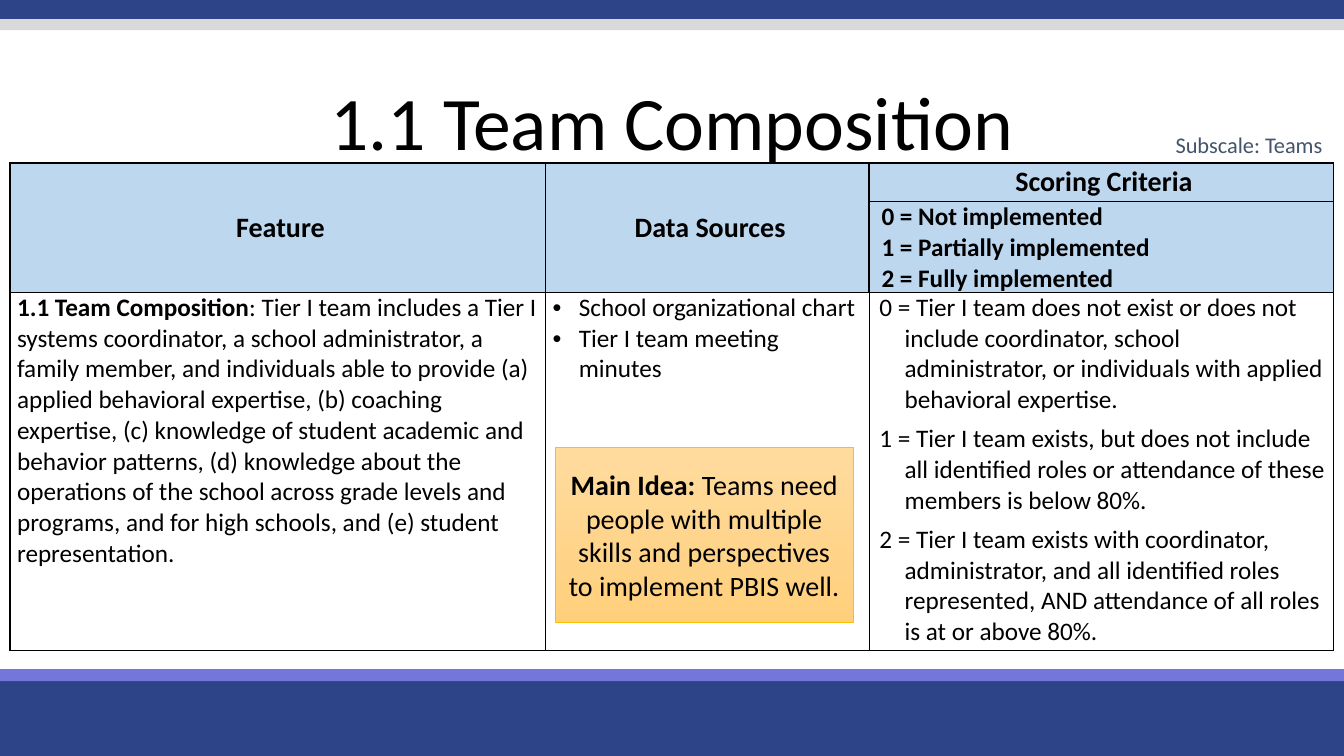
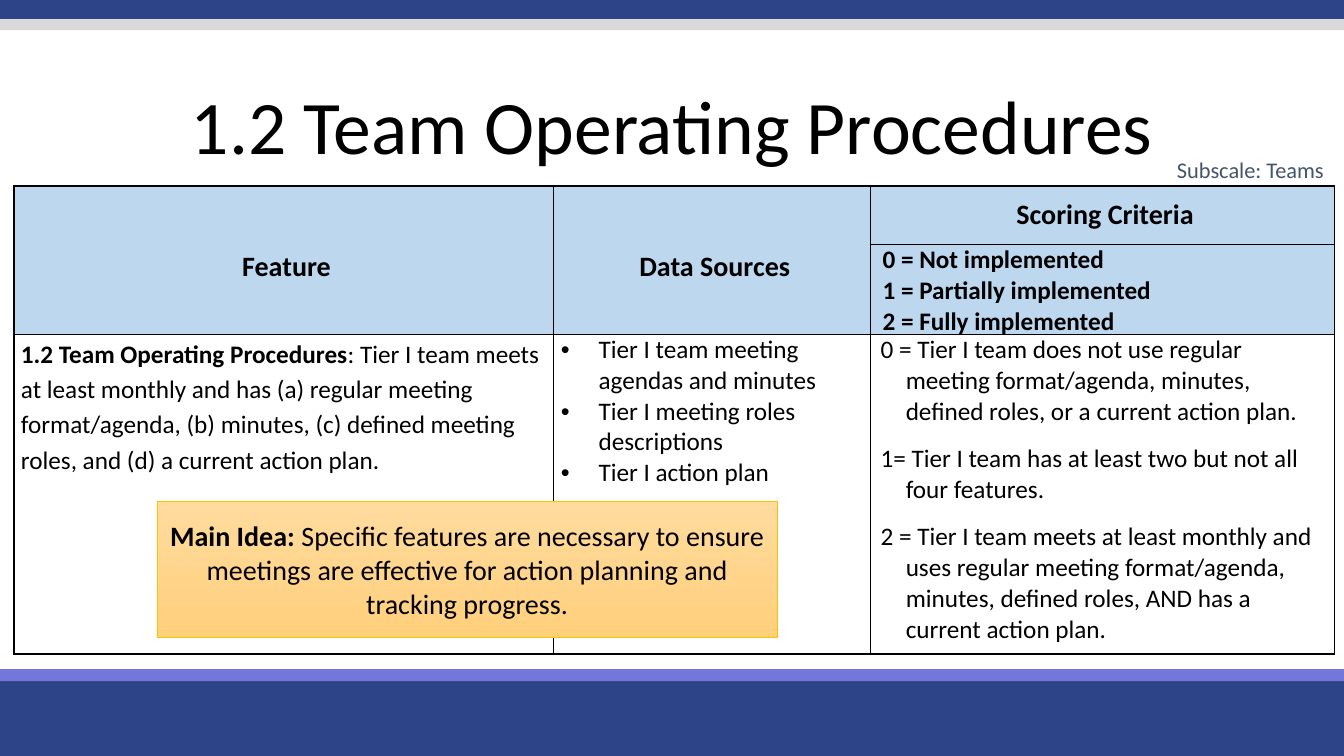
"""Builds two scoring slides on team features, each with a header table, a criteria table and a main idea."""
from dataclasses import dataclass

from lxml import etree
from pptx import Presentation
from pptx.dml.color import RGBColor
from pptx.enum.shapes import MSO_SHAPE
from pptx.enum.text import MSO_ANCHOR, PP_ALIGN
from pptx.oxml.ns import qn
from pptx.util import Pt

RECTANGLE = MSO_SHAPE.RECTANGLE
LEFT, CENTER, RIGHT = PP_ALIGN.LEFT, PP_ALIGN.CENTER, PP_ALIGN.RIGHT
TOP, MIDDLE = MSO_ANCHOR.TOP, MSO_ANCHOR.MIDDLE


@dataclass(frozen=True)
class Theme:
    font: str = "Calibri"
    navy: str = "2E4488"
    violet: str = "7476DA"
    grey: str = "D9D9D9"
    black: str = "000000"
    white: str = "FFFFFF"
    header: str = "BDD7EE"
    slate: str = "44546A"
    idea_light: str = "FFDB9E"
    idea_dark: str = "FFD07C"
    idea_line: str = "FFC000"
    title_size: int = 54
    large_size: int = 20
    body_size: int = 18
    label_size: int = 16
    thin: float = 1
    thick: float = 1.5


THEME = Theme()
WIDTH, HEIGHT = 960, 540
BANDS = [
    (482.4, HEIGHT - 482.4, THEME.navy),
    (478, 8.6, THEME.violet),
    (0, 13.7, THEME.navy),
    (13.7, 7.9, THEME.grey),
]
HEADINGS = ["Feature", "Data Sources", "Scoring Criteria"]
SCALE = ["0 = Not implemented", "1 = Partially implemented", "2 = Fully implemented"]
SUBSCALE = "Subscale: Teams"

SLIDES = [
    {
        "title": "1.1 Team Composition",
        "title_place": (0, 57, WIDTH, 52.6),
        "feature": ": Tier I team includes a Tier I systems coordinator, a school administrator, "
                   "a family member, and individuals able to provide (a) applied behavioral expertise, "
                   "(b) coaching expertise, (c) knowledge of student academic and behavior patterns, "
                   "(d) knowledge about the operations of the school across grade levels and programs, "
                   "and for high schools, and (e) student representation.",
        "feature_spacing": 1,
        "sources": ["School organizational chart", "Tier I team meeting minutes"],
        "source_indent": 18.7,
        "criteria": [
            "0 = Tier I team does not exist or does not include coordinator, school administrator, "
            "or individuals with applied behavioral expertise.",
            "1 = Tier I team exists, but does not include all identified roles or attendance of "
            "these members is below 80%.",
            "2 = Tier I team exists with coordinator, administrator, and all identified roles "
            "represented, AND attendance of all roles is at or above 80%.",
        ],
        "criteria_gap": 6,
        "left": 7.2,
        "columns": [382.6, 231.2, 331.5],
        "header_top": 116.6,
        "header_rows": [27.4, 64.4],
        "body_top": 208.8,
        "body_height": 255.6,
        "idea": "Teams need people with multiple skills and perspectives to implement PBIS well.",
        "idea_place": (396.7, 319.5, 212.6, 125.2),
        "label_place": (789, 90, 162.7, 26.6),
    },
    {
        "title": "1.2 Team Operating Procedures",
        "title_place": (0, 59.8, WIDTH, 61.2),
        "feature": ": Tier I team meets at least monthly and has (a) regular meeting format/agenda, "
                   "(b) minutes, (c) defined meeting roles, and (d) a current action plan.",
        "feature_spacing": 1.15,
        "sources": ["Tier I team meeting agendas and minutes", "Tier I meeting roles descriptions",
                    "Tier I action plan"],
        "source_indent": 27,
        "criteria": [
            "0 = Tier I team does not use regular meeting format/agenda, minutes, defined roles, "
            "or a current action plan.",
            "1= Tier I team has at least two but not all four features.",
            "2 = Tier I team meets at least monthly and uses regular meeting format/agenda, minutes, "
            "defined roles, AND has a current action plan.",
        ],
        "criteria_gap": 12,
        "left": 10,
        "columns": [385.6, 226.2, 331.5],
        "header_top": 132.7,
        "header_rows": [42, 74.6],
        "body_top": 239,
        "body_height": 228.2,
        "idea": "Specific features are necessary to ensure meetings are effective for action planning "
                "and tracking progress.",
        "idea_place": (112.3, 358, 442.8, 97.2),
        "label_place": (790, 108, 162.7, 26.6),
    },
]


def points(values):
    return [Pt(value) for value in values]


def write_text(frame, lines, *, lead="", size=THEME.body_size, color=THEME.black, bold=False,
               align=LEFT, indent=0, hang=0, after=0, spacing=None, bullet=False):
    frame.word_wrap = True
    for index, line in enumerate(lines):
        para = frame.add_paragraph() if index else frame.paragraphs[0]
        para.alignment = align
        para.space_after = Pt(after)
        if spacing:
            para.line_spacing = spacing
        settings = para._p.get_or_add_pPr()
        settings.set("marL", str(Pt(indent)))
        settings.set("indent", str(Pt(-hang)))
        if bullet:
            etree.SubElement(settings, qn("a:buFont"), typeface="Arial")
            etree.SubElement(settings, qn("a:buChar"), char="•")
        for text, strong in ((lead, True), (line, bold)):
            if text:
                span = para.add_run()
                span.text = text
                span.font.name = THEME.font
                span.font.size = Pt(size)
                span.font.bold = strong
                span.font.color.rgb = RGBColor.from_string(color)


def add_text(page, place, text, **style):
    box = page.shapes.add_textbox(*points(place))
    box.text_frame.vertical_anchor = TOP
    write_text(box.text_frame, [text], **style)


def add_rectangle(page, place):
    shape = page.shapes.add_shape(RECTANGLE, *points(place))
    shape.shadow.inherit = False
    return shape


def add_bands(page):
    for top, height, color in BANDS:
        band = add_rectangle(page, (0, top, WIDTH, height))
        band.fill.solid()
        band.fill.fore_color.rgb = RGBColor.from_string(color)
        band.line.fill.background()


def add_idea(page, place, text):
    box = add_rectangle(page, place)
    box.fill.gradient()
    box.fill.gradient_angle = 270
    for stop, color in zip(box.fill.gradient_stops, (THEME.idea_light, THEME.idea_dark)):
        stop.color.rgb = RGBColor.from_string(color)
    box.line.color.rgb = RGBColor.from_string(THEME.idea_line)
    box.line.width = Pt(0.5)
    box.text_frame.vertical_anchor = MIDDLE
    write_text(box.text_frame, [text], lead="Main Idea: ", size=THEME.large_size, align=CENTER)


def style_cell(cell, fill, borders, anchor=TOP):
    cell.margin_left = cell.margin_right = Pt(5)
    cell.margin_top = cell.margin_bottom = 0
    cell.vertical_anchor = anchor
    settings = cell._tc.get_or_add_tcPr()
    for side, width in zip("LRTB", borders):
        line = etree.SubElement(settings, qn(f"a:ln{side}"), w=str(Pt(width)))
        paint = etree.SubElement(line, qn("a:solidFill"))
        etree.SubElement(paint, qn("a:srgbClr"), val=THEME.black)
    cell.fill.solid()
    cell.fill.fore_color.rgb = RGBColor.from_string(fill)


def add_grid(page, left, top, columns, rows):
    place = points((left, top, sum(columns), sum(rows)))
    table = page.shapes.add_table(len(rows), len(columns), *place).table
    table.first_row = table.horz_banding = False
    for column, width in zip(table.columns, columns):
        column.width = Pt(width)
    for row, height in zip(table.rows, rows):
        row.height = Pt(height)
    return table


def add_header(page, content):
    table = add_grid(page, content["left"], content["header_top"], content["columns"],
                     content["header_rows"])
    thin, thick = THEME.thin, THEME.thick
    last = len(HEADINGS) - 1
    for index, heading in enumerate(HEADINGS):
        sides = (thin if index == 1 else thick, thick if index == last else thin)
        style_cell(table.cell(0, index), THEME.header, (*sides, thick, thin), MIDDLE)
        style_cell(table.cell(1, index), THEME.header, (*sides, thin, thin))
        if index < last:
            table.cell(0, index).merge(table.cell(1, index))
        write_text(table.cell(0, index).text_frame, [heading], size=THEME.large_size, bold=True,
                   align=CENTER, indent=26, hang=22.3)
    write_text(table.cell(1, last).text_frame, SCALE, bold=True, indent=26, hang=22.3)


def add_body(page, content):
    table = add_grid(page, content["left"], content["body_top"], content["columns"],
                     [content["body_height"]])
    feature, sources, criteria = table.rows[0].cells
    for cell in (feature, sources, criteria):
        style_cell(cell, THEME.white, [THEME.thin] * 4)
    write_text(feature.text_frame, [content["feature"]], lead=content["title"],
               spacing=content["feature_spacing"])
    write_text(sources.text_frame, content["sources"], indent=content["source_indent"],
               hang=content["source_indent"], bullet=True)
    write_text(criteria.text_frame, content["criteria"], indent=20.2, hang=18,
               after=content["criteria_gap"])


def add_page(deck, content):
    page = deck.slides.add_slide(deck.slide_layouts[6])
    add_bands(page)
    add_text(page, content["title_place"], content["title"], size=THEME.title_size, align=CENTER,
             spacing=0.9)
    add_header(page, content)
    add_body(page, content)
    add_idea(page, content["idea_place"], content["idea"])
    add_text(page, content["label_place"], SUBSCALE, size=THEME.label_size, color=THEME.slate,
             align=RIGHT)


def main():
    deck = Presentation()
    deck.slide_width, deck.slide_height = Pt(WIDTH), Pt(HEIGHT)
    for content in SLIDES:
        add_page(deck, content)
    deck.save("out.pptx")


if __name__ == "__main__":
    main()
